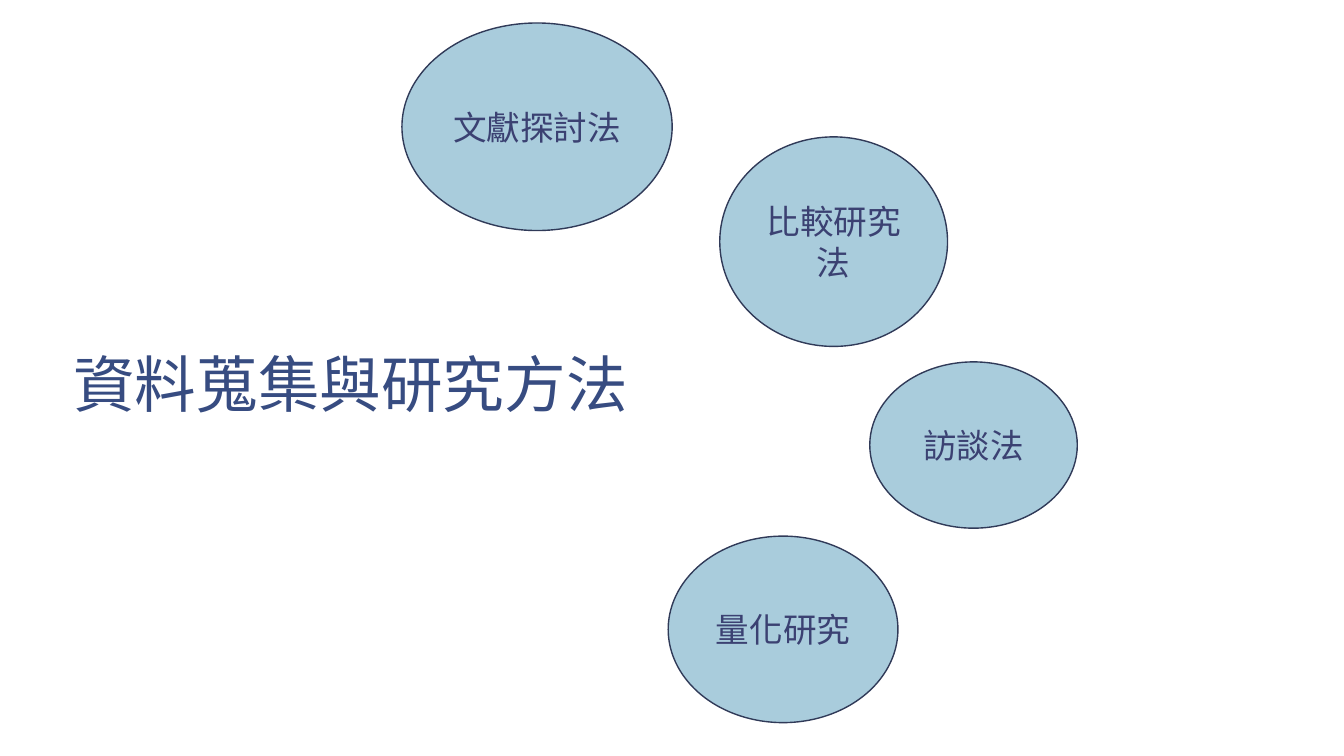
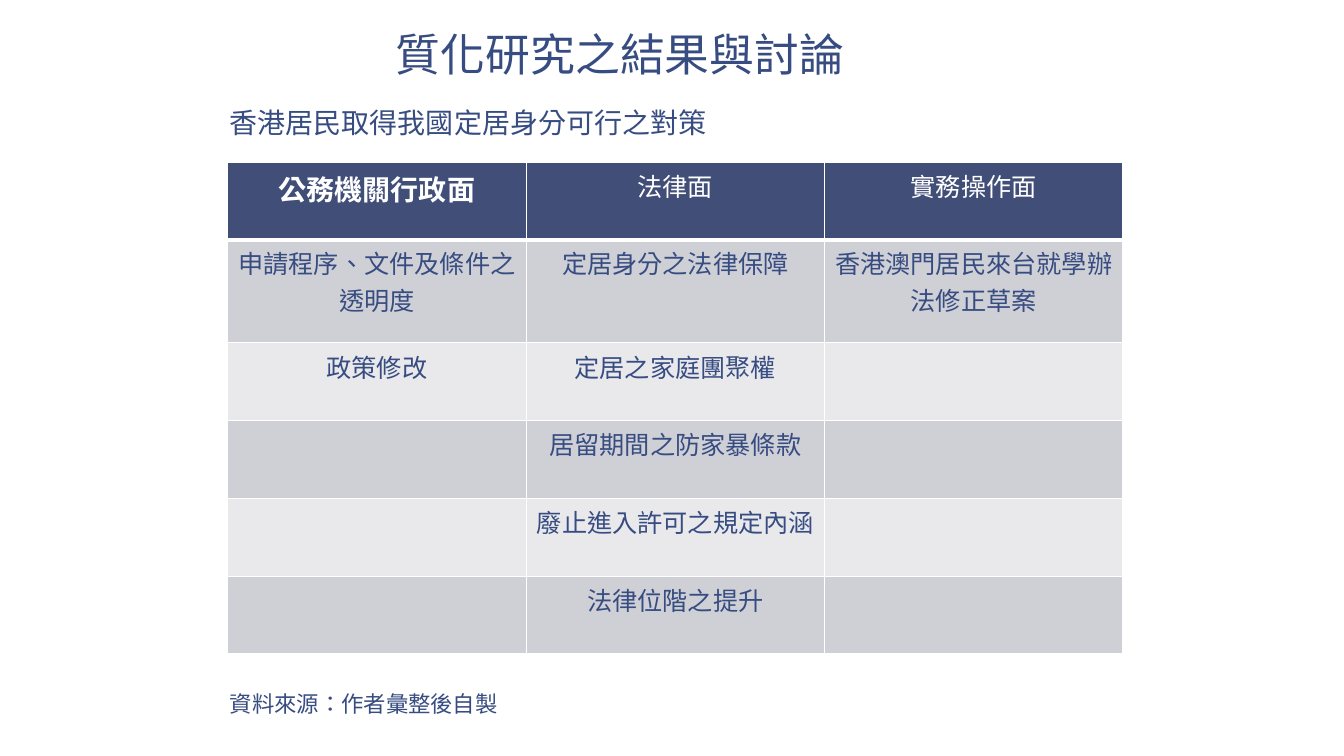
from lxml import etree
from pptx import Presentation
from pptx.dml.color import RGBColor
from pptx.enum import lang, shapes, text
from pptx.oxml import ns
from pptx.util import Cm, Pt

COLORS = {
    "ink": "374C81",
    "circle": "A9CCDC",
    "circle_line": "303A58",
    "circle_text": "3B4172",
    "header": "414E77",
    "band_dark": "CFD0D6",
    "band_light": "E9E9EC",
    "white": "FFFFFF",
}
CJK = "Noto Sans CJK SC"
SERIF = "Times New Roman"
DISPLAY = "League Spartan"
LEFT = 5.54

METHODS = [
    ("文獻探討法", 10.13, 0.58, 6.81, 5.23),
    ("比較研究法", 18.14, 3.45, 5.74, 5.28),
    ("訪談法", 21.92, 9.12, 5.23, 4.19),
    ("量化研究", 16.84, 13.51, 5.79, 4.7),
]
HEADERS = [("公務機關行政面", 20, DISPLAY, True),
           ("法律面", 18, DISPLAY, False),
           ("實務操作面", 18, DISPLAY, False)]
MEASURES = [
    ("申請程序、文件及條件之透明度", "定居身分之法律保障", "香港澳門居民來台就學辦法修正草案"),
    ("政策修改", "定居之家庭團聚權", ""),
    ("", "居留期間之防家暴條款", ""),
    ("", "廢止進入許可之規定內涵", ""),
    ("", "法律位階之提升", ""),
]
ROW_HEIGHTS = [1.94, 2.6] + [1.96] * 4


def rgb(name):
    return RGBColor.from_string(COLORS[name])


def add_run(p, words, size, color="ink", font=CJK, bold=False):
    r = p.add_run()
    r.text = words
    r.font.size = Pt(size)
    r.font.bold = bold
    r.font.name = font
    r.font.color.rgb = rgb(color)
    r.font.language_id = lang.MSO_LANGUAGE_ID.TRADITIONAL_CHINESE
    # East Asian glyphs take their typeface from a:ea
    ea = etree.Element(ns.qn("a:ea"), typeface=CJK)
    r.font._element.find(ns.qn("a:latin")).addnext(ea)


def add_line_of_text(slide, runs, size, left, top, width, height):
    """Place one unwrapped line; runs holds (words, font) pairs."""
    sp = slide.shapes.add_textbox(Cm(left), Cm(top), Cm(width), Cm(height))
    tf = sp.text_frame
    tf.word_wrap = False
    tf.vertical_anchor = text.MSO_ANCHOR.MIDDLE
    for words, font in runs:
        add_run(tf.paragraphs[0], words, size, font=font)


def add_circle(slide, words, left, top, width, height):
    sp = slide.shapes.add_shape(shapes.MSO_SHAPE.OVAL, Cm(left), Cm(top), Cm(width), Cm(height))
    sp.shadow.inherit = False
    sp.fill.solid()
    sp.fill.fore_color.rgb = rgb("circle")
    sp.line.color.rgb = rgb("circle_line")
    sp.line.width = Pt(1)
    tf = sp.text_frame
    tf.word_wrap = True
    tf.vertical_anchor = text.MSO_ANCHOR.MIDDLE
    p = tf.paragraphs[0]
    p.alignment = text.PP_ALIGN.CENTER
    add_run(p, words, 24, "circle_text")


def set_borders(cell, widths):
    """Draw white cell edges; widths maps L, R, T, B to points."""
    tc_pr = cell._tc.get_or_add_tcPr()
    for side, width in widths.items():
        ln = etree.SubElement(tc_pr, ns.qn(f"a:ln{side}"), w=str(Pt(width)))
        fill = etree.SubElement(ln, ns.qn("a:solidFill"))
        etree.SubElement(fill, ns.qn("a:srgbClr"), val=COLORS["white"])


def style_cell(cell, fill, bottom=1, top=1):
    set_borders(cell, {"L": 1, "R": 1, "T": top, "B": bottom})
    cell.fill.solid()
    cell.fill.fore_color.rgb = rgb(fill)
    p = cell.text_frame.paragraphs[0]
    p.alignment = text.PP_ALIGN.CENTER
    return p


def add_measures_table(slide):
    frame = slide.shapes.add_table(len(ROW_HEIGHTS), len(HEADERS), Cm(5.74), Cm(4.1),
                                   Cm(22.56), Cm(sum(ROW_HEIGHTS)))
    table = frame.table
    for row, height in zip(table.rows, ROW_HEIGHTS):
        row.height = Cm(height)
    for col, (words, size, font, bold) in enumerate(HEADERS):
        p = style_cell(table.cell(0, col), "header", bottom=3)
        add_run(p, words, size, "white", font, bold)
    for row, measures in enumerate(MEASURES, 1):
        band = "band_dark" if row % 2 else "band_light"
        for col, words in enumerate(measures):
            p = style_cell(table.cell(row, col), band, top=3 if row == 1 else 1)
            if words:
                add_run(p, words, 18, font=DISPLAY)


def add_slide(prs):
    slide = prs.slides.add_slide(prs.slide_layouts[6])
    slide.background.fill.solid()
    slide.background.fill.fore_color.rgb = rgb("white")
    return slide


def build_methods(prs):
    slide = add_slide(prs)
    add_line_of_text(slide, [("資料蒐集與研究方法", CJK)], 44, 1.6, 8.6, 14.5, 2.1)
    for method in METHODS:
        add_circle(slide, *method)


def build_results(prs):
    slide = add_slide(prs)
    add_measures_table(slide)
    add_line_of_text(slide, [("香港居民取得我國定居身分可行之對策", CJK)], 20,
                     LEFT, 2.51, 12.62, 1.12)
    add_line_of_text(slide, [("資料來源", SERIF), ("：", CJK), ("作者彙整後自製", SERIF)], 16,
                     LEFT, 17.15, 7.34, 1.17)
    add_line_of_text(slide, [("質化研究之結果與討論", CJK)], 32, 9.73, 0.53, 11.91, 1.63)


def main():
    prs = Presentation()
    prs.slide_width, prs.slide_height = Cm(33.87), Cm(19.05)
    build_methods(prs)
    build_results(prs)
    prs.save("out.pptx")


if __name__ == "__main__":
    main()
